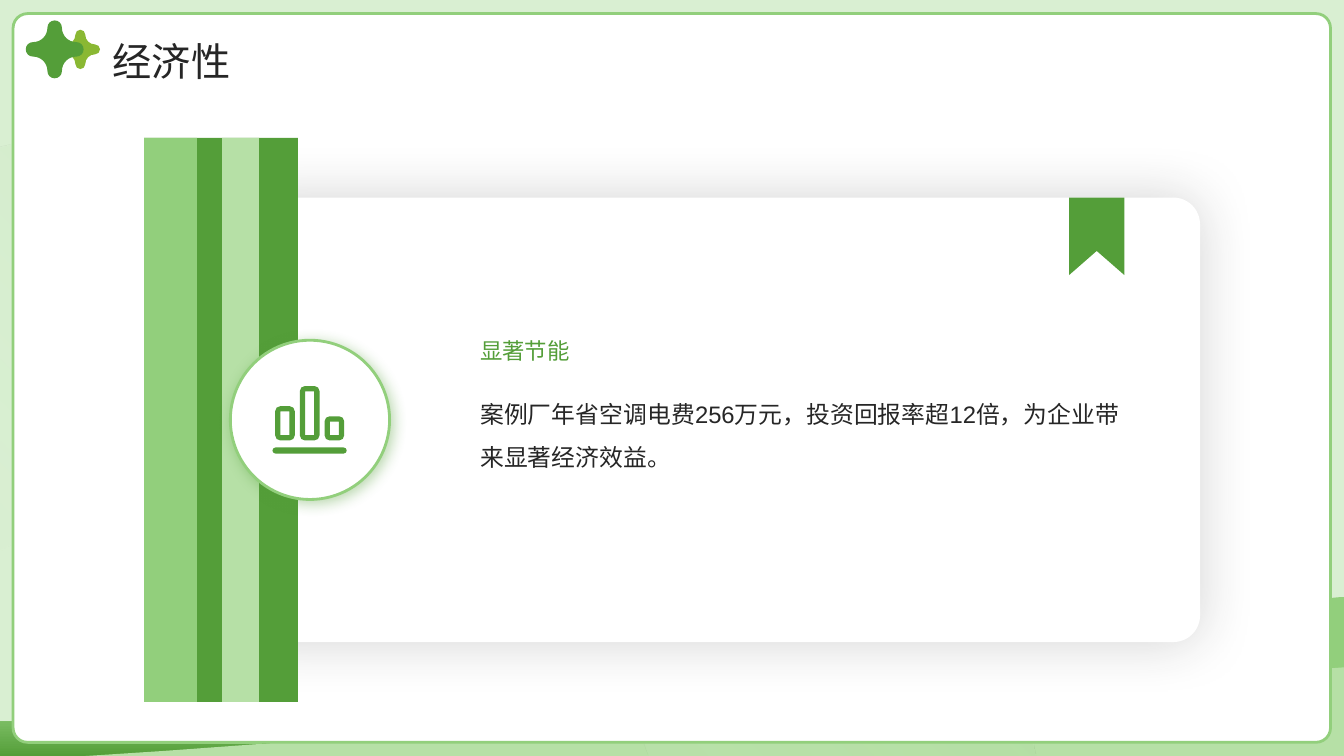
from dataclasses import dataclass

from pptx import Presentation
from pptx.dml.color import RGBColor as RGB
from pptx.enum.shapes import MSO_SHAPE as SHAPE
from pptx.enum.text import MSO_ANCHOR as ANCHOR
from pptx.oxml import parse_xml
from pptx.oxml.ns import nsdecls, qn
from pptx.util import Inches, Pt

# Grid: one column or row is a tenth of an inch
CELL = Inches(0.1)
COLS, ROWS = 133.33, 75
FONT = "Arial"
C = {"green": "549E39", "light": "92CF7C", "pale": "B6E0A6", "mist": "D9EFD2",
     "lime": "8AB833", "ink": "262626", "white": "FFFFFF"}

# A start point, then pairs (lines) and sextuples (cubic curves)
Path = list[tuple[float, ...]]


@dataclass
class Shadow:
    color: str
    alpha: int
    blur: float
    dist: float = 0
    angle: int = 0


@dataclass
class Box:
    x: float
    y: float
    w: float
    h: float
    fill: str
    kind: SHAPE = SHAPE.RECTANGLE
    adj: float | None = None
    line: str | None = None
    shadow: Shadow | None = None


@dataclass
class Label:
    x: float
    y: float
    w: float
    h: float
    text: str
    size: int
    color: str
    spacing: float
    anchor: ANCHOR = ANCHOR.TOP
    inset: tuple[float, float] = (0, 0)


@dataclass
class Gradient:
    stops: list[tuple[int, str, int]]  # position, colour, opacity
    angle: int


def cells(n: float) -> int:
    return round(n * CELL)


def color_xml(name: str, alpha: int) -> str:
    return f'<a:srgbClr val="{C[name]}"><a:alpha val="{alpha * 1000}"/></a:srgbClr>'


def draw_box(b: Box) -> None:
    s = shapes.add_shape(b.kind, *map(cells, (b.x, b.y, b.w, b.h)))
    s.shadow.inherit = False
    if b.adj is not None:
        s.adjustments[0] = b.adj
    s.fill.solid()
    s.fill.fore_color.rgb = RGB.from_string(C[b.fill])
    if b.line:
        s.line.color.rgb = RGB.from_string(C[b.line])
        s.line.width = Pt(2)
    else:
        s.line.fill.background()
    if b.shadow:
        sh = b.shadow
        s._element.spPr.find(qn("a:effectLst")).append(parse_xml(
            f'<a:outerShdw {nsdecls("a")} blurRad="{Pt(sh.blur)}" dist="{Pt(sh.dist)}" '
            f'dir="{sh.angle * 60000}" algn="ctr" rotWithShape="0">'
            f'{color_xml(sh.color, sh.alpha)}</a:outerShdw>'))


def draw_label(b: Label) -> None:
    tf = shapes.add_textbox(*map(cells, (b.x, b.y, b.w, b.h))).text_frame
    tf.word_wrap = True
    tf.vertical_anchor = b.anchor
    tf.margin_left = tf.margin_right = cells(b.inset[0])
    tf.margin_top = tf.margin_bottom = cells(b.inset[1])
    p = tf.paragraphs[0]
    p.line_spacing = b.spacing
    r = p.add_run()
    r.text = b.text
    r.font.size, r.font.name = Pt(b.size), FONT
    r.font.color.rgb = RGB.from_string(C[b.color])


def pairs(seg: tuple[float, ...]) -> Path:
    return list(zip(seg[::2], seg[1::2]))


def draw_outline(contours: list[Path], fill: str | Gradient) -> None:
    start = contours[0][0]
    fb = shapes.build_freeform(cells(start[0]), cells(start[1]), scale=1.0)
    for i, contour in enumerate(contours):
        if i:
            fb.move_to(*map(cells, contour[0]))
        fb.add_line_segments([(cells(x), cells(y)) for seg in contour[1:]
                              for x, y in pairs(seg)], close=False)
    s = fb.convert_to_shape()
    s.shadow.inherit = False
    s.line.fill.background()
    sp = s._element.spPr

    # Join each three steps of a sextuple into one curve
    steps = iter(list(sp.iter(qn("a:lnTo"))))
    for contour in contours:
        for seg in contour[1:]:
            group = [next(steps) for _ in pairs(seg)]
            if len(group) == 3:
                curve = parse_xml(f'<a:cubicBezTo {nsdecls("a")}/>')
                group[0].addprevious(curve)
                for step in group:
                    curve.append(step[0])
                    step.getparent().remove(step)

    if isinstance(fill, str):
        s.fill.solid()
        s.fill.fore_color.rgb = RGB.from_string(C[fill])
        return
    s.fill.background()
    stops = "".join(f'<a:gs pos="{pos * 1000}">{color_xml(name, alpha)}</a:gs>'
                    for pos, name, alpha in fill.stops)
    sp.replace(sp.find(qn("a:noFill")), parse_xml(
        f'<a:gradFill {nsdecls("a")} rotWithShape="1"><a:gsLst>{stops}</a:gsLst>'
        f'<a:lin ang="{fill.angle * 60000}" scaled="0"/></a:gradFill>'))


def rect(x: float, y: float, w: float, h: float) -> Path:
    return [(x, y), (x + w, y), (x + w, y + h), (x, y + h), (x, y)]


def rounded(x: float, y: float, w: float, h: float, r: float) -> Path:
    k, x2, y2 = .45 * r, x + w, y + h
    return [(x + r, y), (x2 - r, y), (x2 - k, y, x2, y + k, x2, y + r),
            (x2, y2 - r), (x2, y2 - k, x2 - k, y2, x2 - r, y2),
            (x + r, y2), (x + k, y2, x, y2 - k, x, y2 - r),
            (x, y + r), (x, y + k, x + k, y, x + r, y)]


def star(cx: float, cy: float, radius: float) -> Path:
    arm = [(.47, -.25, .25, -.47, .25, -.75), (.25, -.89, .14, -1, 0, -1),
           (-.14, -1, -.25, -.89, -.25, -.75)]
    out: Path = [(cx + .75 * radius, cy - .25 * radius)]
    for _ in range(4):
        out += [tuple(n for x, y in pairs(seg) for n in (cx + radius * x, cy + radius * y))
                for seg in arm]
        arm = [tuple(n for x, y in pairs(seg) for n in (y, -x)) for seg in arm]
    return out


prs = Presentation()
prs.slide_width, prs.slide_height = cells(COLS), cells(ROWS)
shapes = prs.slides.add_slide(prs.slide_layouts[6]).shapes

# Backdrop: hills and a wide ring
draw_box(Box(0, 0, COLS, ROWS, "mist"))
draw_outline([[(COLS, 59.2), (COLS, ROWS), (0, ROWS), (0, 71.6), (1.3, 71.6),
               (40.8, 70.9, 91.3, 63.4, 127, 59.8), (COLS, 59.2)]],
             Gradient([(0, "light", 100), (65, "light", 100), (100, "green", 100)], 90))
draw_outline([[(COLS, 66.2), (COLS, ROWS), (8.5, ROWS), (16.2, 74.5),
               (56.2, 71.6, 94.3, 68.9, 128.3, 66.6), (COLS, 66.2)]], "pale")
draw_outline([[(23.5, 11.2), (16.5, 11.2, 9.7, 12.1, 3.3, 13.8), (0, 14.7), (0, 54.7),
               (.5, 54.4), (7.2, 50.3, 15.1, 48, 23.5, 48),
               (41.2, 48, 56.4, 58.2, 63.6, 73.1), (64.4, ROWS), (102.8, ROWS),
               (102.1, 72.1), (93.1, 37.1, 61.3, 11.2, 23.5, 11.2)]],
             Gradient([(0, "light", 37), (85, "mist", 10), (100, "mist", 10)], 135))
draw_box(Box(1.3, 1.35, 130.7, 72.3, "white", SHAPE.ROUNDED_RECTANGLE, .02, "light"))

# Card with bookmark and text
draw_box(Box(24.4, 19.6, 94.65, 44.1, "white", SHAPE.ROUNDED_RECTANGLE, .06,
             shadow=Shadow("ink", 20, 40)))
draw_outline([[(106.05, 19.6), (111.55, 19.6), (111.55, 27.3), (108.8, 24.9),
               (106.05, 27.3), (106.05, 19.6)]], "green")
draw_label(Label(47.65, 38.25, 63.9, 20.6,
                 "案例厂年省空调电费256万元，投资回报率超12倍，为企业带来显著经济效益。",
                 17, "ink", 1.5))
draw_label(Label(47.65, 28.6, 63.9, 7.5, "显著节能", 16, "green", 1.3, ANCHOR.BOTTOM))

# Striped band
for x, w, fill in [(14.3, 15.25, "green"), (14.3, 5.23, "light"), (22.03, 3.67, "pale")]:
    draw_box(Box(x, 13.68, w, 55.95, fill))

# Medallion with bar chart icon
draw_box(Box(22.85, 33.75, 15.8, 15.8, "white", SHAPE.OVAL, line="light",
             shadow=Shadow("green", 40, 10, 3, 45)))
BAR_W, BAR_FOOT, RIM = 1.95, 43.7, .53
icon: list[Path] = []
for i, top in enumerate((40.3, 38.3, 41.3)):
    left, height = 27.3 + 2.45 * i, BAR_FOOT - top
    icon += [rounded(left, top, BAR_W, height, .5),
             rect(left + RIM, top + RIM, BAR_W - 2 * RIM, height - 2 * RIM)]
draw_outline(icon + [rounded(27.03, 44.4, 7.37, .6, .3)], "green")

# Title with stars
draw_label(Label(10.2, 1.8, 113.8, 5.7, "经济性", 28, "ink", 1.3, inset=(1, .5)))
draw_outline([star(7.97, 4.9, 1.95)], "lime")
draw_outline([star(5.43, 4.9, 2.87)], "green")

prs.save("out.pptx")
